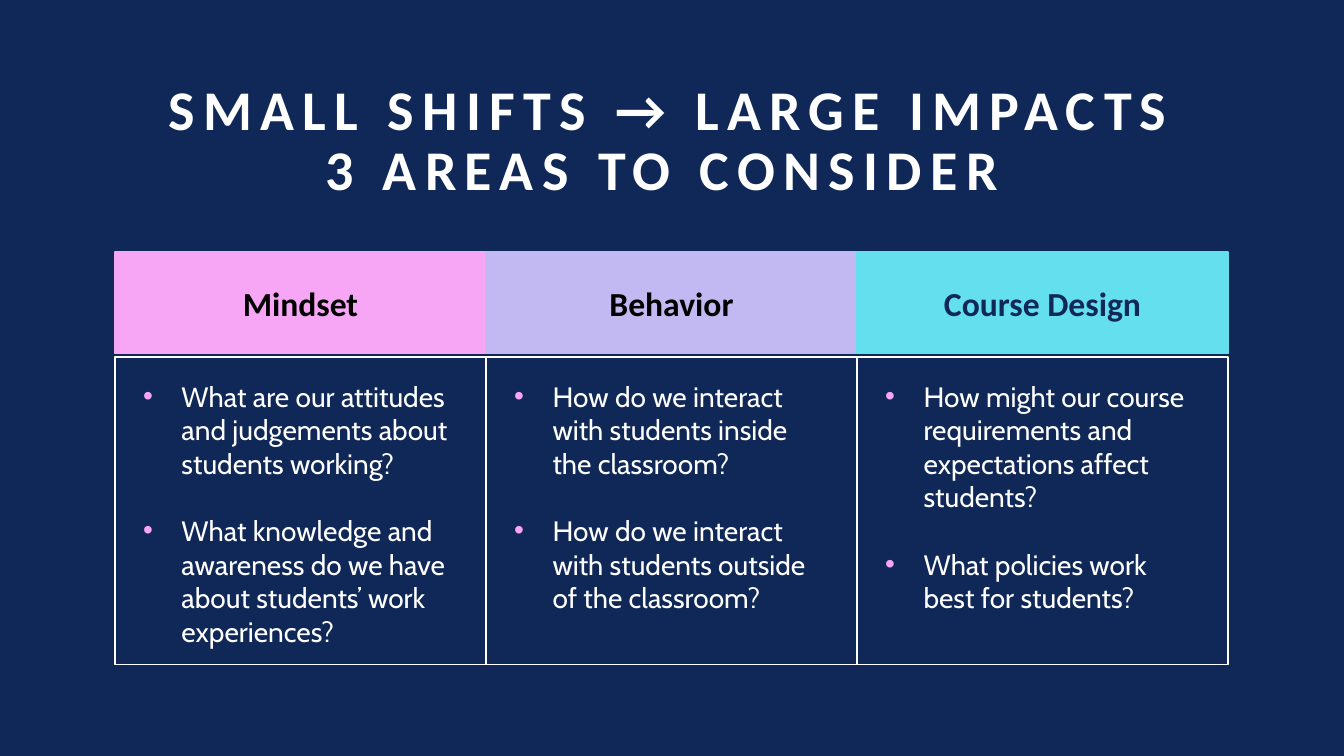
import pptx
import pptx.dml.color
import pptx.enum.shapes
import pptx.enum.text
import pptx.util
from lxml import etree
from pptx.oxml.ns import qn

RGBColor = pptx.dml.color.RGBColor
Pt = pptx.util.Pt
ALIGN = pptx.enum.text.PP_ALIGN
ANCHOR = pptx.enum.text.MSO_ANCHOR

NAVY = RGBColor(0x10, 0x28, 0x57)
WHITE = RGBColor(0xFF, 0xFF, 0xFF)
BLACK = RGBColor(0x00, 0x00, 0x00)
PINK = RGBColor(0xF6, 0xA6, 0xF4)
LAVENDER = RGBColor(0xC3, 0xB9, 0xF2)
AQUA = RGBColor(0x64, 0xDF, 0xED)

HEADER_HEIGHT = 101
HEADER_GAP = 3
BULLET_INDENT = 38

AREAS = [
    ("Mindset", PINK, BLACK, [
        "What are our attitudes and judgements about students working?",
        "What knowledge and awareness do we have about students’ work experiences?",
    ]),
    ("Behavior", LAVENDER, BLACK, [
        "How do we interact with students inside the classroom?",
        "How do we interact with students outside of the classroom?",
    ]),
    ("Course Design", AQUA, NAVY, [
        "How might our course requirements and expectations affect students?",
        "What policies work best for students?",
    ]),
]


def px(length):
    """Turn px (100 to the inch) into EMU."""
    return pptx.util.Emu(length * 9144)


def set_font(paragraph, name, size, color, bold=False):
    font = paragraph.font
    font.name, font.size, font.bold = name, Pt(size), bold
    font.color.rgb = color


def add_bullet(paragraph):
    properties = paragraph._p.get_or_add_pPr()
    properties.set("marL", str(px(BULLET_INDENT)))
    properties.set("indent", str(-px(BULLET_INDENT)))
    bullet_color = etree.Element(qn("a:buClr"))
    etree.SubElement(bullet_color, qn("a:srgbClr"), val=str(PINK))
    bullet_font = etree.Element(qn("a:buFont"), typeface="Arial")
    bullet_character = etree.Element(qn("a:buChar"), char="•")
    position = len(properties.findall(qn("a:spcBef")))
    for offset, element in enumerate((bullet_color, bullet_font, bullet_character)):
        properties.insert(position + offset, element)


def add_box(slide, left, top, width, height, line_color, fill_color=None):
    shape = slide.shapes.add_shape(
        pptx.enum.shapes.MSO_SHAPE.RECTANGLE, px(left), px(top), px(width), px(height))
    shape.shadow.inherit = False
    if fill_color is None:
        shape.fill.background()
    else:
        shape.fill.solid()
        shape.fill.fore_color.rgb = fill_color
    shape.line.color.rgb = line_color
    shape.line.width = Pt(1)
    shape.text_frame.word_wrap = True
    return shape


def add_title(slide, left, top, width, height, text):
    frame = slide.shapes.add_textbox(px(left), px(top), px(width), px(height)).text_frame
    frame.word_wrap = True
    frame.vertical_anchor = ANCHOR.BOTTOM
    paragraph = frame.paragraphs[0]
    paragraph.text = text
    paragraph.alignment = ALIGN.CENTER
    paragraph.line_spacing = 0.9
    set_font(paragraph, "Calibri", 40, WHITE, bold=True)
    for run in paragraph.runs:
        run.font._element.set("spc", "600")


def add_area(slide, left, top, width, height, area):
    """Place one column: a coloured heading above its outlined questions."""
    heading, color, heading_color, questions = area
    header = add_box(slide, left, top, width, HEADER_HEIGHT, color, color)
    header.text_frame.vertical_anchor = ANCHOR.MIDDLE
    paragraph = header.text_frame.paragraphs[0]
    paragraph.text = heading
    paragraph.alignment = ALIGN.CENTER
    set_font(paragraph, "Calibri", 24, heading_color, bold=True)

    offset = HEADER_HEIGHT + HEADER_GAP
    frame = add_box(slide, left, top + offset, width, height - offset, WHITE).text_frame
    frame.vertical_anchor = ANCHOR.TOP
    frame.margin_left, frame.margin_top = px(28), px(22)
    frame.margin_right, frame.margin_bottom = px(30), px(5)
    for index, question in enumerate(questions):
        paragraph = frame.add_paragraph() if index else frame.paragraphs[0]
        paragraph.text = question
        paragraph.alignment = ALIGN.LEFT
        if index:
            paragraph.space_before = Pt(24)
        set_font(paragraph, "Cabin", 20, WHITE)
        add_bullet(paragraph)


def add_areas(slide, left, top, width, height):
    column_width = width // len(AREAS)
    for index, area in enumerate(AREAS):
        add_area(slide, left + index * column_width, top, column_width, height, area)


def main():
    presentation = pptx.Presentation()
    presentation.slide_width, presentation.slide_height = px(1333), px(750)
    slide = presentation.slides.add_slide(presentation.slide_layouts[6])
    slide.background.fill.solid()
    slide.background.fill.fore_color.rgb = NAVY
    add_title(slide, 137, 72, 1060, 134,
              "SMALL SHIFTS → LARGE IMPACTS\v3 AREAS TO CONSIDER ")
    add_areas(slide, 114, 250, 1105, 409)
    presentation.save("out.pptx")


if __name__ == "__main__":
    main()
